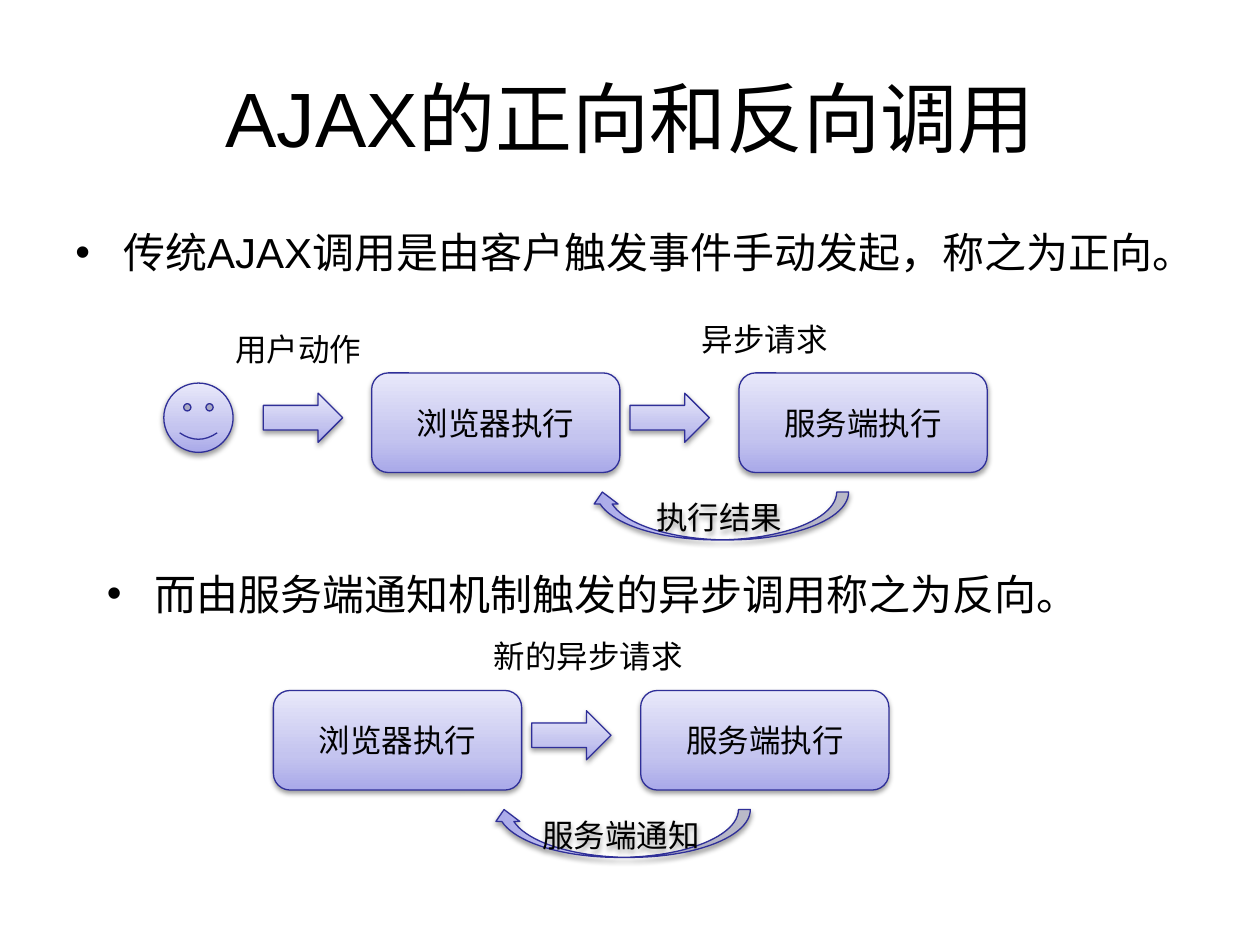
from copy import deepcopy
from dataclasses import dataclass

from pptx import Presentation
from pptx.dml.color import RGBColor as RGB
from pptx.enum.shapes import MSO_SHAPE as SHAPE
from pptx.enum.text import MSO_ANCHOR as ANCHOR, PP_ALIGN as ALIGN
from pptx.oxml import parse_xml
from pptx.oxml.ns import nsdecls
from pptx.util import Inches, Pt


@dataclass(frozen=True)
class Theme:
    font: str = "Arial"
    ink: str = "000000"
    line: str = "2F2F98"
    gradient: tuple = ((0, "A9A9E9"), (0.35, "C4C4EF"), (1, "E8E8FA"))
    title: int = 44
    body: int = 24
    label: int = 18


THEME = Theme()
TITLE = "AJAX的正向和反向调用"
BULLETS = [
    ("传统AJAX调用是由客户触发事件手动发起，称之为正向。", (0.5, 1.75, 9, 0.98)),
    ("而由服务端通知机制触发的异步调用称之为反向。", (0.75, 4.46, 9, 0.63)),
]
STEPS = ["浏览器执行", "服务端执行"]
FLOWS = [
    dict(x=2.95, y=2.96, request="异步请求", request_at=(5.47, 1.26), reply="执行结果"),
    dict(x=2.17, y=5.48, request="新的异步请求", request_at=(3.82, 1.81), reply="服务端通知"),
]
USER_ACTION = "用户动作"
BOX_W, BOX_H, PITCH = 1.97, 0.79, 2.915
ARROW_W, ARROW_H, ARROW_DY = 0.63, 0.39, 0.16
LOOP_W, LOOP_H = 0.38, 2.05
FACE, LABEL_H = 0.55, 0.4


def write(tf, text, size=THEME.label, align=ALIGN.LEFT, anchor=ANCHOR.TOP, bullet=False):
    """Put one formatted paragraph into a text frame."""
    tf.word_wrap = True
    tf.vertical_anchor = anchor
    p = tf.paragraphs[0]
    p.alignment = align
    if bullet:
        pPr = p._p.get_or_add_pPr()
        pPr.set("marL", str(Inches(0.38)))
        pPr.set("indent", str(-Inches(0.38)))
        pPr.append(parse_xml(f'<a:buFont {nsdecls("a")} typeface="Arial"/>'))
        pPr.append(parse_xml(f'<a:buChar {nsdecls("a")} char="•"/>'))
    r = p.add_run()
    r.text = text
    r.font.name, r.font.size = THEME.font, Pt(size)
    r.font.color.rgb = RGB.from_string(THEME.ink)


def add_text(slide, text, at, **style):
    """Add a text box."""
    write(slide.shapes.add_textbox(*map(Inches, at)).text_frame, text, **style)


def add_figure(slide, kind, at, text="", **style):
    """Add a preset shape with the gradient, outline and soft shadow."""
    sp = slide.shapes.add_shape(kind, *map(Inches, at))
    sp.fill.gradient()
    sp.fill.gradient_angle = 90
    stops = sp._element.spPr.find(".//" + "{*}gsLst")
    stops.append(deepcopy(stops[-1]))
    for stop, (position, color) in zip(sp.fill.gradient_stops, THEME.gradient):
        stop.position, stop.color.rgb = position, RGB.from_string(color)
    sp.line.color.rgb = RGB.from_string(THEME.line)
    sp.line.width = Pt(0.75)
    sp.shadow.inherit = False
    sp._element.spPr.find("{*}effectLst").append(parse_xml(
        f'<a:outerShdw {nsdecls("a")} blurRad="{Pt(3.1)}" dist="{Pt(1.6)}" dir="5400000" '
        'rotWithShape="0"><a:srgbClr val="000000"><a:alpha val="38000"/></a:srgbClr></a:outerShdw>'))
    if text:
        write(sp.text_frame, text, align=ALIGN.CENTER, **style)
    return sp


def add_flow(slide, x, y, request, request_at, reply):
    """Draw the browser and server boxes, the request arrow and the reply loop."""
    for i, step in enumerate(STEPS):
        add_figure(slide, SHAPE.FLOWCHART_ALTERNATE_PROCESS,
                   (x + i * PITCH, y, BOX_W, BOX_H), step, anchor=ANCHOR.MIDDLE)
    add_figure(slide, SHAPE.RIGHT_ARROW, (x + 2.05, y + ARROW_DY, ARROW_W, ARROW_H))
    left, width = request_at
    add_text(slide, request, (left, y - 0.47, width, LABEL_H))
    loop = add_figure(slide, SHAPE.CURVED_LEFT_ARROW, (x + 2.57, y + 0.11, LOOP_W, LOOP_H), reply)
    loop.rotation = 90
    loop.text_frame._txBody.bodyPr.set("vert", "vert270")


def add_user(slide, x, y):
    """Draw the user and the action that starts a flow at x, y."""
    add_figure(slide, SHAPE.SMILEY_FACE, (x - 1.65, y + 0.08, FACE, FACE))
    add_figure(slide, SHAPE.RIGHT_ARROW, (x - 0.86, y + ARROW_DY, ARROW_W, ARROW_H))
    add_text(slide, USER_ACTION, (x - 1.18, y - 0.39, 1.26, LABEL_H))


def main():
    """Build the slide and save it."""
    prs = Presentation()
    prs.slide_width, prs.slide_height = Inches(10), Inches(7.5)
    slide = prs.slides.add_slide(prs.slide_layouts[5])
    title = slide.shapes.title
    title.left, title.top, title.width, title.height = map(Inches, (0.5, 0.3, 9, 1.25))
    write(title.text_frame, TITLE, size=THEME.title, align=ALIGN.CENTER, anchor=ANCHOR.MIDDLE)
    for text, at in BULLETS:
        add_text(slide, text, at, size=THEME.body, bullet=True)
    add_user(slide, FLOWS[0]["x"], FLOWS[0]["y"])
    for flow in FLOWS:
        add_flow(slide, **flow)
    prs.save("out.pptx")


if __name__ == "__main__":
    main()
